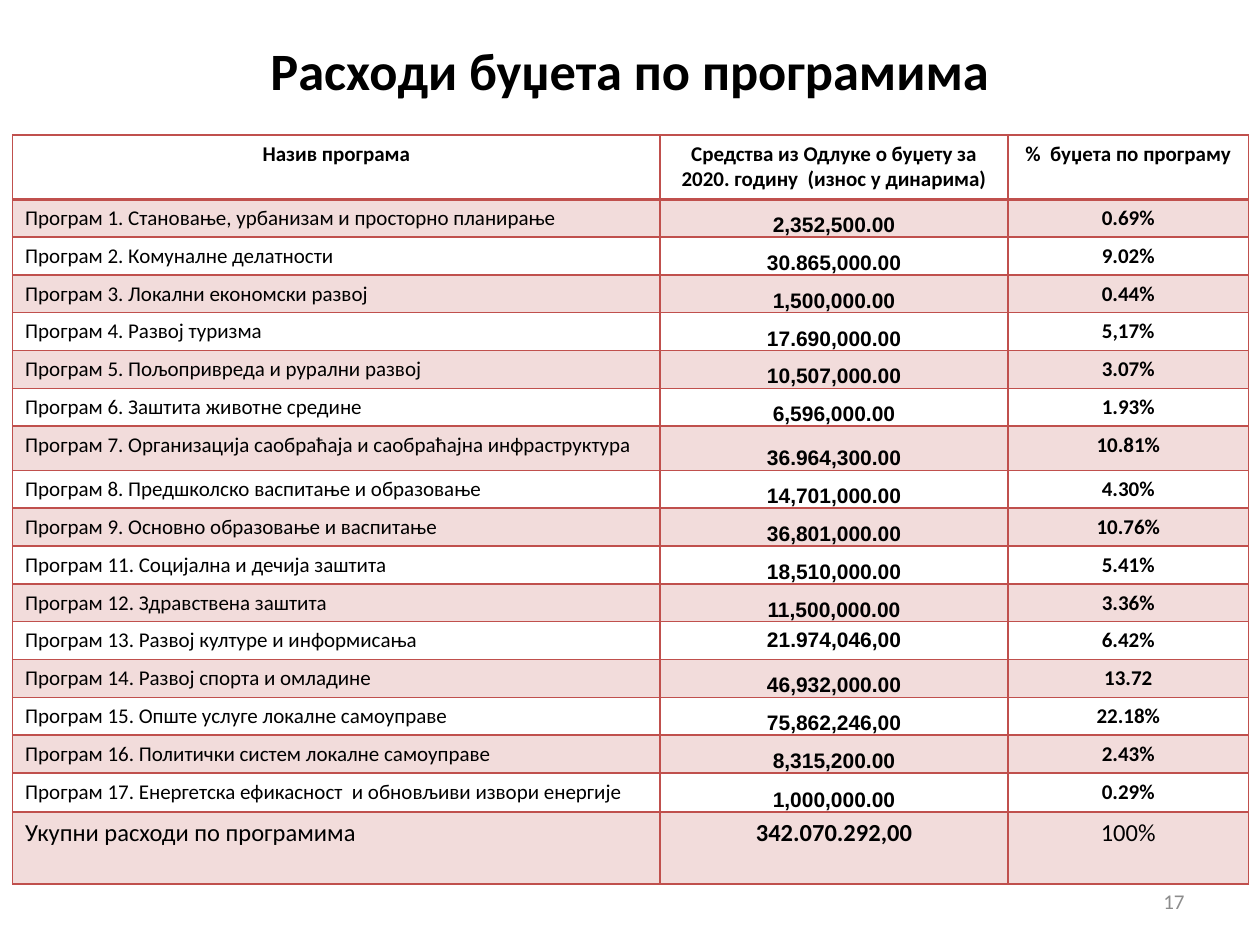
"""Builds a slide with a table of budget spending by programme."""
from lxml.etree import SubElement
from pptx import Presentation
from pptx.dml.color import RGBColor
from pptx.enum.text import MSO_ANCHOR as Anchor, PP_ALIGN as Align
from pptx.oxml.ns import qn
from pptx.util import Inches, Pt

TITLE = "Расходи буџета по програмима"
PAGE_NUMBER = "17"
HEADER = (
    "Назив програма",
    "Средства из Одлуке о буџету за 2020. годину  (износ у динарима)",
    "%  буџета по програму",
)
PROGRAMS = [
    ("Програм 1. Становање, урбанизам и просторно планирање", "2,352,500.00", "0.69%"),
    ("Програм 2. Комуналне делатности", "30.865,000.00", "9.02%"),
    ("Програм 3. Локални економски развој", "1,500,000.00", "0.44%"),
    ("Програм 4. Развој туризма", "17.690,000.00", "5,17%"),
    ("Програм 5. Пољопривреда и рурални развој", "10,507,000.00", "3.07%"),
    ("Програм 6. Заштита животне средине", "6,596,000.00", "1.93%"),
    ("Програм 7. Организација саобраћаја и саобраћајна инфраструктура", "36.964,300.00", "10.81%"),
    ("Програм 8. Предшколско васпитање и образовање", "14,701,000.00", "4.30%"),
    ("Програм 9. Основно образовање и васпитање", "36,801,000.00", "10.76%"),
    ("Програм 11. Социјална и дечија заштита", "18,510,000.00", "5.41%"),
    ("Програм 12. Здравствена заштита", "11,500,000.00", "3.36%"),
    ("Програм 13. Развој културе и информисања", "21.974,046,00", "6.42%"),
    ("Програм 14. Развој спорта и омладине", "46,932,000.00", "13.72"),
    ("Програм 15. Опште услуге локалне самоуправе", "75,862,246,00", "22.18%"),
    ("Програм 16. Политички систем локалне самоуправе", "8,315,200.00", "2.43%"),
    ("Програм 17. Енергетска ефикасност  и обновљиви извори енергије", "1,000,000.00", "0.29%"),
]
TOTAL = ("Укупни расходи по програмима", "342.070.292,00", "100%")

ROWS = [HEADER, *PROGRAMS, TOTAL]
LAST = len(ROWS) - 1
COLUMN_WIDTHS = (5.14, 2.76, 1.91)
ROW_HEIGHT = 0.3
SPECIAL_HEIGHTS = {0: 0.51, 7: 0.35, 16: 0.31, LAST: 0.57}
TOP_ANCHORED_AMOUNTS = (0, 12, LAST)
RED, PINK, BLACK, GRAY = "C0504D", "F2DCDB", "000000", "8C8C8C"


def color(value):
    return RGBColor.from_string(value)


def write(frame, text, size=12, font="Calibri", ink=BLACK, bold=False, align=Align.LEFT):
    para = frame.paragraphs[0]
    para.alignment = align
    span = para.add_run()
    span.text = text
    span.font.size, span.font.name, span.font.bold = Pt(size), font, bold
    span.font.color.rgb = color(ink)


def place(box, left, top, width, height):
    box.left, box.top, box.width, box.height = map(Inches, (left, top, width, height))


def add_borders(cell, **points):
    properties = cell._tc.get_or_add_tcPr()
    for index, side in enumerate("LRTB"):
        line = SubElement(properties, qn(f"a:ln{side}"), w=str(Pt(points.get(side, 1))))
        fill = SubElement(line, qn("a:solidFill"))
        SubElement(fill, qn("a:srgbClr"), val=RED)
        properties.insert(index, line)


def format_cell(cell, text, row, column):
    is_amount = column == 1 and 0 < row < LAST
    if is_amount and row not in TOP_ANCHORED_AMOUNTS:
        cell.vertical_anchor = Anchor.BOTTOM
        cell.margin_left = cell.margin_right = cell.margin_top = cell.margin_bottom = 0
    if row % 2:
        cell.fill.solid()
        cell.fill.fore_color.rgb = color(PINK)
    else:
        cell.fill.background()
    add_borders(cell, T=2 if row == 1 else 1, B=2 if row == 0 else 1)
    write(
        cell.text_frame,
        text,
        size=14 if row == LAST else 12,
        font="Arial" if is_amount else "Calibri",
        bold=row == 0 or column == 1 or (column == 2 and row < LAST),
        align=Align.CENTER if row == 0 or column else Align.LEFT,
    )


def add_budget_table(page):
    heights = [SPECIAL_HEIGHTS.get(row, ROW_HEIGHT) for row in range(len(ROWS))]
    size = Inches(sum(COLUMN_WIDTHS)), Inches(sum(heights))
    table = page.shapes.add_table(
        len(ROWS), len(COLUMN_WIDTHS), Inches(0.1), Inches(1.07), *size
    ).table
    table.first_row = table.horz_banding = False
    for column, width in zip(table.columns, COLUMN_WIDTHS):
        column.width = Inches(width)
    for row, (texts, height) in enumerate(zip(ROWS, heights)):
        table.rows[row].height = Inches(height)
        for column, text in enumerate(texts):
            format_cell(table.cell(row, column), text, row, column)


def main():
    deck = Presentation()
    deck.slide_width, deck.slide_height = Inches(10), Inches(7.5)
    page = deck.slides.add_slide(deck.slide_layouts[5])

    title = page.shapes.title
    place(title, 0.74, 0.13, 8.52, 0.85)
    title.text_frame.vertical_anchor = Anchor.MIDDLE
    write(title.text_frame, TITLE, size=30, bold=True, align=Align.CENTER)

    number = page.shapes.add_textbox(0, 0, 0, 0)
    place(number, 7.17, 6.95, 2.33, 0.4)
    number.text_frame.word_wrap = True
    number.text_frame.vertical_anchor = Anchor.MIDDLE
    write(number.text_frame, PAGE_NUMBER, ink=GRAY, align=Align.RIGHT)

    add_budget_table(page)
    deck.save("out.pptx")


if __name__ == "__main__":
    main()
